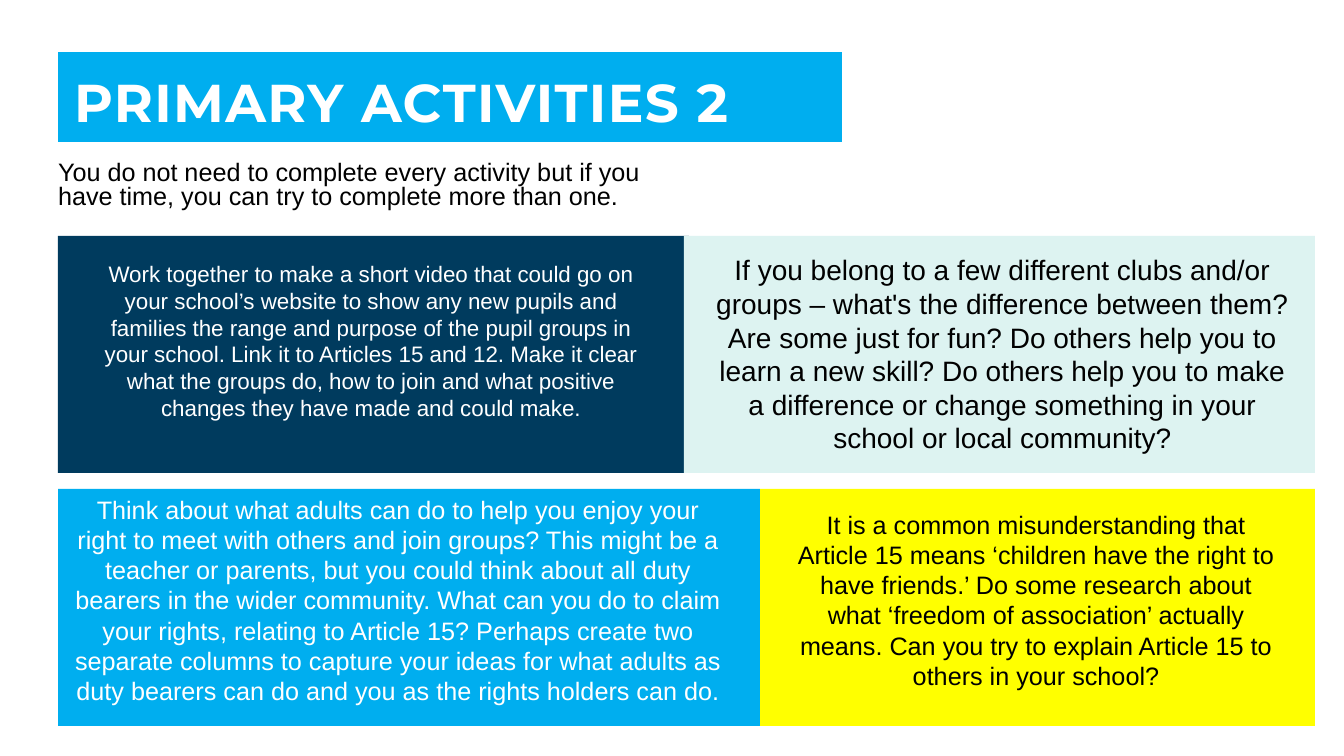
from pptx import Presentation
from pptx.dml.color import RGBColor
from pptx.enum.shapes import MSO_SHAPE as Shape
from pptx.enum.text import MSO_ANCHOR as Anchor, MSO_AUTO_SIZE as AutoSize, PP_ALIGN as Align
from pptx.oxml.ns import qn
from pptx.util import Pt
from lxml import etree

PX = 914400 / 100.8
WHITE = RGBColor(0xFF, 0xFF, 0xFF)
BLACK = RGBColor(0x00, 0x00, 0x00)
SKY = RGBColor(0x00, 0xAE, 0xEF)
NAVY = RGBColor(0x00, 0x3B, 0x5E)
MINT = RGBColor(0xDD, 0xF3, 0xF1)
YELLOW = RGBColor(0xFF, 0xFF, 0x00)

LEFT, RIGHT = 58, 1315
ROW_TOP, ROW_HEIGHT, ROW_GAP = 236, 237, 16
TOP_CARD_WIDTH, SPLIT = 631, 760

VIDEO = (
    "Work together to make a short video that could go on your school’s website to show "
    "any new pupils and families the range and purpose of the pupil groups in your school. "
    "Link it to Articles 15 and 12. Make it clear what the groups do, how to join and what "
    "positive changes they have made and could make."
)
CLUBS = (
    "If you belong to a few different clubs and/or groups – what's the difference between "
    "them? Are some just for fun? Do others help you to learn a new skill? Do others help "
    "you to make a difference or change something in your school or local community?"
)
ADULTS = (
    "Think about what adults can do to help you enjoy your right to meet with others and "
    "join groups? This might be a teacher or parents, but you could think about all duty "
    "bearers in the wider community. What can you do to claim your rights, relating to "
    "Article 15? Perhaps create two separate columns to capture your ideas for what adults "
    "as duty bearers can do and you as the rights holders can do."
)
FRIENDS = (
    "It is a common misunderstanding that Article 15 means ‘children have the right to have "
    "friends.’ Do some research about what ‘freedom of association’ actually means. Can you "
    "try to explain Article 15 to others in your school?"
)


def emu(*lengths):
    return [round(length * PX) for length in lengths]


def apply(target, values):
    for name, value in values.items():
        setattr(target, name, value)


def place(holder, box):
    apply(holder, dict(zip(("left", "top", "width", "height"), emu(*box))))


def write(frame, text, size, color, paragraph_format, font="Arial", bold=False):
    paragraph = frame.paragraphs[0]
    apply(paragraph, paragraph_format)
    run = paragraph.add_run()
    run.text = text
    apply(run.font, {"size": Pt(size), "name": font, "bold": bold})
    run.font.color.rgb = color
    return run


def set_margins(frame, *margins):
    names = ("margin_left", "margin_top", "margin_right", "margin_bottom")
    apply(frame, dict(zip(names, emu(*margins))))


def heading(title, box):
    place(title, box)
    title.fill.solid()
    title.fill.fore_color.rgb = SKY
    frame = title.text_frame
    apply(frame, {"word_wrap": True, "vertical_anchor": Anchor.MIDDLE,
                  "auto_size": AutoSize.SHAPE_TO_FIT_TEXT})
    set_margins(frame, 16, 16, 12, 0)
    run = write(frame, "PRIMARY ACTIVITIES 2", 38, WHITE,
                {"alignment": Align.LEFT, "line_spacing": 0.9, "space_before": Pt(0)},
                "Montserrat", True)
    run.font._element.set("spc", "100")


def introduction(body, box):
    place(body, box)
    frame = body.text_frame
    apply(frame, {"word_wrap": True, "vertical_anchor": Anchor.TOP,
                  "auto_size": AutoSize.NONE})
    set_margins(frame, 0, 5, 10, 5)
    properties = frame.paragraphs[0]._p.get_or_add_pPr()
    properties.set("marL", "0")
    properties.set("indent", "0")
    etree.SubElement(properties, qn("a:buNone"))
    write(frame, "You do not need to complete every activity but if you have time, "
          "you can try to complete more than one.", 18, BLACK,
          {"alignment": Align.LEFT, "line_spacing": 0.8, "space_before": Pt(0)})


def activity(slide, box, fill, color, size, text, text_box):
    card = slide.shapes.add_shape(Shape.RECTANGLE, *emu(*box))
    card.shadow.inherit = False
    card.fill.solid()
    card.fill.fore_color.rgb = fill
    card.line.fill.background()
    left, top = box[:2]
    dx, dy, width, height = text_box
    wording = slide.shapes.add_textbox(*emu(left + dx, top + dy, width, height))
    frame = wording.text_frame
    apply(frame, {"word_wrap": True, "auto_size": AutoSize.SHAPE_TO_FIT_TEXT})
    write(frame, text, size, color, {"alignment": Align.CENTER})


def activities_slide(deck):
    slide = deck.slides.add_slide(deck.slide_layouts[1])
    heading(slide.shapes.title, (LEFT, 60, 784, 74))
    introduction(slide.placeholders[1], (LEFT, 157, 626, 63))
    second_row = ROW_TOP + ROW_HEIGHT + ROW_GAP
    cards = [
        (LEFT, ROW_TOP, TOP_CARD_WIDTH, NAVY, WHITE, 16, VIDEO, (33, 19, 560, 201)),
        (RIGHT - TOP_CARD_WIDTH, ROW_TOP, TOP_CARD_WIDTH, MINT, BLACK, 20, CLUBS,
         (18, 12, 601, 214)),
        (LEFT, second_row, SPLIT - LEFT, SKY, WHITE, 18, ADULTS, (4, 0, 672, 224)),
        (SPLIT, second_row, RIGHT - SPLIT, YELLOW, BLACK, 18, FRIENDS, (26, 15, 500, 194)),
    ]
    for left, top, width, *content in cards:
        activity(slide, (left, top, width, ROW_HEIGHT), *content)


def main():
    deck = Presentation()
    deck.slide_width, deck.slide_height = emu(1344, 756)
    activities_slide(deck)
    deck.save("out.pptx")


if __name__ == "__main__":
    main()
